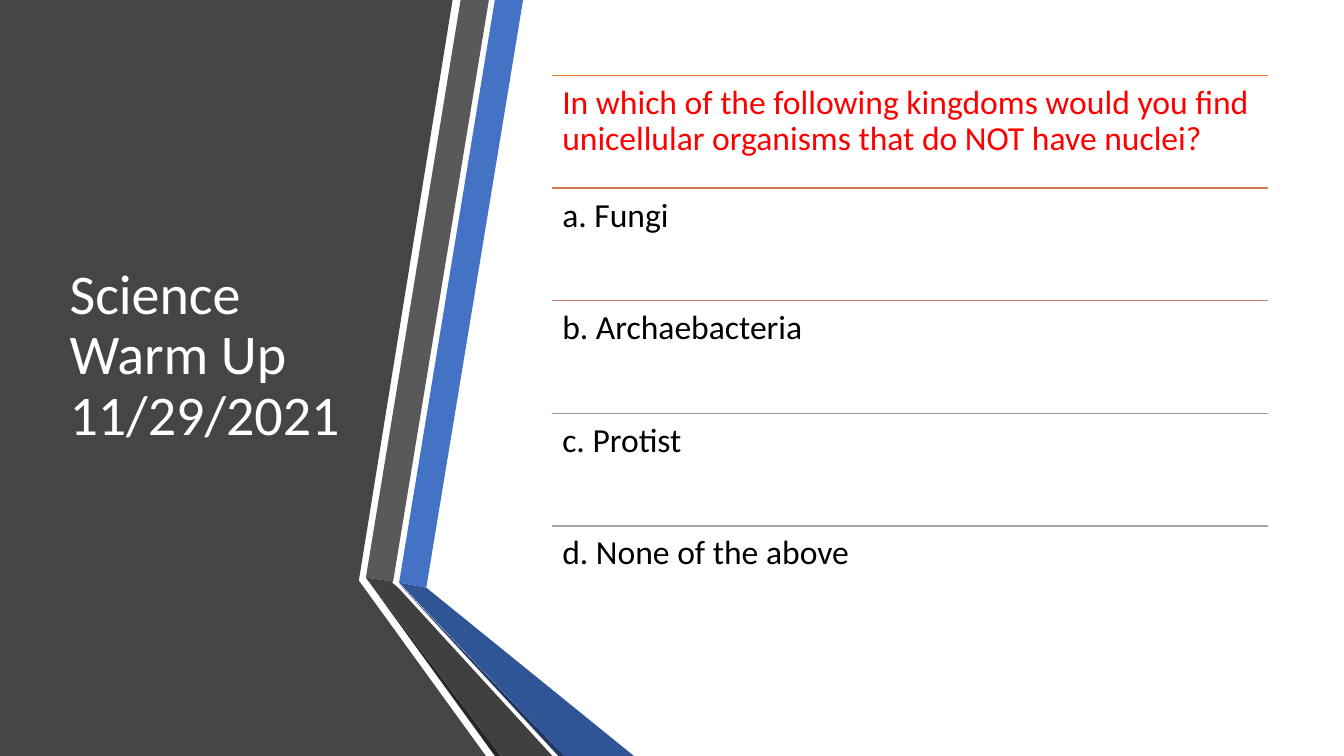
from lxml import etree
from pptx import Presentation
from pptx import util as u
from pptx.dml.color import RGBColor
from pptx.enum import shapes as es, text as et
from pptx.oxml.ns import qn

Pt = u.Pt


def paint(target, colour):
    """Give a fill or line format one solid colour."""
    target.solid()
    target.fore_color.rgb = RGBColor.from_string(colour)


def write(frame, words, size, colour, **frame_format):
    """Fill a text frame with one left-aligned paragraph."""
    frame.text = words
    for key, value in {"word_wrap": True, "auto_size": et.MSO_AUTO_SIZE.NONE, **frame_format}.items():
        setattr(frame, key, value)
    paragraph = frame.paragraphs[0]
    paragraph.alignment = et.PP_ALIGN.LEFT
    paragraph.line_spacing = 0.9
    for run in paragraph.runs:
        for key, value in {"name": "Calibri", "size": Pt(size)}.items():
            setattr(run.font, key, value)
        paint(run.font.fill, colour)


deck = Presentation()
deck.slide_width, deck.slide_height = Pt(960), Pt(540)
slide = deck.slides.add_slide(deck.slide_layouts[5])

# Dark panel and folded ribbons, back to front
bottom = 540
ribbons = [
    ("454545", [(0, 0), (323.28, 0), (256.32, 414.72), (347.04, bottom), (0, bottom)]),
    ("4472C4", [(285.12, 416.16), (304.56, 419.76), (373.68, 0), (353.52, 0)]),
    ("595959", [(349.2, 0), (329.04, 0), (261.36, 412.56), (280.8, 415.44)]),
    ("262626", [(261.36, 412.56), (353.52, bottom), (357.84, bottom)]),
    ("203864", [(285.12, 416.88), (398.88, bottom), (403.2, bottom)]),
    ("2F5597", [(285.12, 416.16), (403.2, bottom), (452.88, bottom), (304.56, 419.76)]),
    ("404040", [(394.56, bottom), (284.4, 419.76), (280.08, 416.16), (280.8, 415.44),
                (261.36, 412.56), (357.84, bottom)]),
]
for colour, corners in ribbons:
    start, *rest = [(Pt(x), Pt(y)) for x, y in corners]
    outline = slide.shapes.build_freeform(*start)
    outline.add_line_segments(rest, close=True)
    ribbon = outline.convert_to_shape()
    ribbon.shadow.inherit = False
    paint(ribbon.fill, colour)
    ribbon.line.fill.background()

# Heading, raised above the panel
heading = slide.shapes.title
for key, value in {"left": 42.48, "top": 54, "width": 218.88, "height": 401.76}.items():
    setattr(heading, key, Pt(value))
write(heading.text_frame, "Science Warm Up\v11/29/2021", 40, "FFFFFF",
      vertical_anchor=et.MSO_ANCHOR.MIDDLE)
slide.shapes._spTree.append(heading._element)

# Question and answers, each under its own rule
left, top, width, pitch = 394.56, 54, 511.2, 80.4
inset = Pt(7.2)
insets = {f"margin_{side}": inset for side in ("left", "top", "right", "bottom")}
rows = [
    ("In which of the following kingdoms would you find unicellular organisms that do NOT have nuclei?",
     "FF0000", "ED7D31"),
    ("a. Fungi", "000000", "D87A51"),
    ("b. Archaebacteria", "000000", "C48170"),
    ("c. Protist", "000000", "B4908B"),
    ("d. None of the above", "000000", "A5A5A5"),
]
for index, (words, ink, rule_colour) in enumerate(rows):
    y = top + index * pitch
    rule = slide.shapes.add_connector(es.MSO_CONNECTOR.STRAIGHT, Pt(left), Pt(y), Pt(left + width), Pt(y))
    rule.line.width = Pt(1)
    paint(rule.line.fill, rule_colour)
    etree.SubElement(rule._element.spPr, qn("a:effectLst"))
    answer = slide.shapes.add_textbox(Pt(left), Pt(y), Pt(width), Pt(pitch))
    write(answer.text_frame, words, 24, ink, vertical_anchor=et.MSO_ANCHOR.TOP, **insets)

deck.save("out.pptx")
